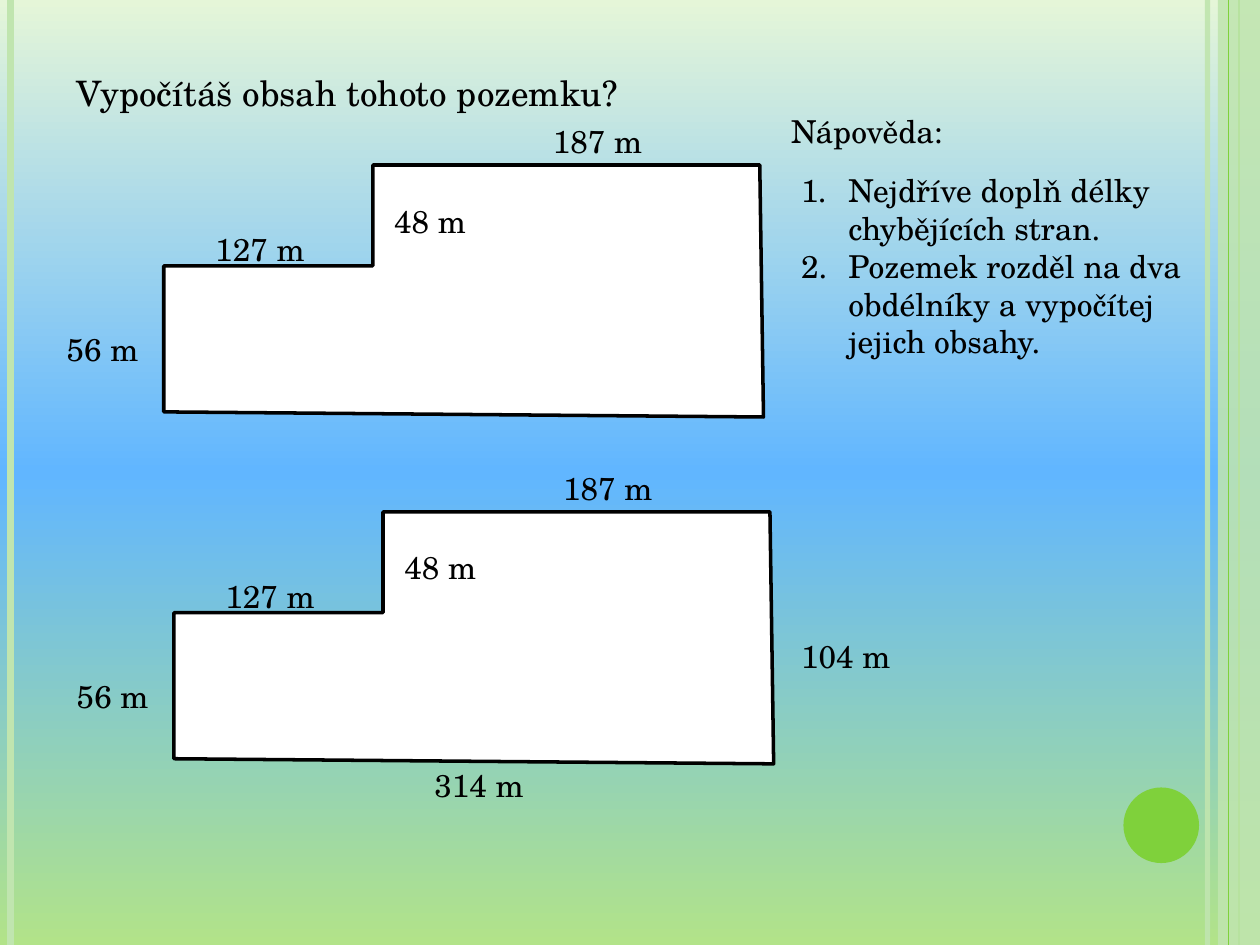
from copy import deepcopy

from lxml import etree
from pptx import Presentation
from pptx.dml.color import RGBColor
from pptx.enum.shapes import MSO_CONNECTOR, MSO_SHAPE
from pptx.enum.text import MSO_AUTO_SIZE
from pptx.oxml.ns import qn
from pptx.util import Pt

STRAIGHT = MSO_CONNECTOR.STRAIGHT
RECTANGLE, OVAL = MSO_SHAPE.RECTANGLE, MSO_SHAPE.OVAL
GROW = MSO_AUTO_SIZE.SHAPE_TO_FIT_TEXT

BLACK = RGBColor(0x00, 0x00, 0x00)
WHITE = RGBColor(0xFF, 0xFF, 0xFF)
GREEN = RGBColor(0x7F, 0xD1, 0x3B)
PALE_GREEN = RGBColor(0xC0, 0xE5, 0xAF)
BACKGROUND = [
    (0, RGBColor(0xE5, 0xF6, 0xD8)),
    (0.5, RGBColor(0x61, 0xB6, 0xFF)),
    (1, RGBColor(0xB2, 0xE3, 0x89)),
]
FONT = "TeX Gyre Schola"
WIDTH, HEIGHT = 720, 540

# Plot outline and its labels (text, left, top, width), relative to the plot
OUTLINE = [(0, 57.6), (119.5, 57.6), (119.5, 0), (340.6, 0), (342.7, 144), (0, 141.1)]
SIDES = [
    ("48 m", 124.6, 17.3, 62.6),
    ("187 m", 215.3, -28.1, 90.7),
    ("127 m", 22.3, 33.8, 85),
    ("56 m", -62.6, 90.7, 67.7),
]
FOUND_SIDES = [("104 m", 351.3, 68.2, 108), ("314 m", 141.8, 141.7, 113)]


def set_background(slide):
    fill = slide.background.fill
    fill.gradient()
    fill.gradient_angle = 270
    stops = slide.element.find(".//" + qn("a:gsLst"))
    stops.append(deepcopy(stops[0]))
    for stop, (position, color) in zip(fill.gradient_stops, BACKGROUND):
        stop.position = position
        stop.color.rgb = color


def set_alpha(sp, percent):
    color = sp.element.spPr.find(".//" + qn("a:srgbClr"))
    etree.SubElement(color, qn("a:alpha"), val=str(percent * 1000))


def add_stripe(slide, x, color, weight):
    line = slide.shapes.add_connector(STRAIGHT, Pt(x), 0, Pt(x), Pt(HEIGHT))
    line.line.color.rgb = color
    line.line.width = Pt(weight)
    etree.SubElement(line.element.spPr, qn("a:effectLst"))
    return line


def add_block(slide, kind, left, top, width, height, color):
    sp = slide.shapes.add_shape(kind, Pt(left), Pt(top), Pt(width), Pt(height))
    sp.shadow.inherit = False
    sp.fill.solid()
    sp.fill.fore_color.rgb = color
    sp.line.fill.background()
    return sp


def add_text(slide, text, left, top, width, height=29, size=18):
    box = slide.shapes.add_textbox(Pt(left), Pt(top), Pt(width), Pt(height))
    tf = box.text_frame
    tf.word_wrap = True
    tf.auto_size = GROW
    tf.text = text
    for p in tf.paragraphs:
        for r in p.runs:
            r.font.name = FONT
            r.font.size = Pt(size)
            r.font.color.rgb = BLACK
    return tf


def number_paragraphs(tf, indent):
    for p in tf.paragraphs:
        pPr = p._p.get_or_add_pPr()
        pPr.set("marL", str(Pt(indent)))
        pPr.set("indent", str(-Pt(indent)))
        etree.SubElement(pPr, qn("a:buFont"), typeface="+mj-lt")
        etree.SubElement(pPr, qn("a:buAutoNum"), type="arabicPeriod")


def add_plot(slide, left, top, labels):
    points = [(Pt(left + x), Pt(top + y)) for x, y in OUTLINE]
    builder = slide.shapes.build_freeform(*points[0])
    builder.add_line_segments(points[1:], close=True)
    sp = builder.convert_to_shape()
    sp.shadow.inherit = False
    sp.fill.solid()
    sp.fill.fore_color.rgb = WHITE
    sp.line.color.rgb = BLACK
    sp.line.width = Pt(2)
    for text, x, y, width in labels:
        add_text(slide, text, left + x, top + y, width)


def main():
    prs = Presentation()
    prs.slide_width, prs.slide_height = Pt(WIDTH), Pt(HEIGHT)
    slide = prs.slides.add_slide(prs.slide_layouts[6])

    # Background and edge decoration
    set_background(slide)
    set_alpha(add_stripe(slide, 690, PALE_GREEN, 3), 93)
    add_stripe(slide, 6, PALE_GREEN, 4.5)
    add_stripe(slide, 708, GREEN, 1.5)
    set_alpha(add_block(slide, RECTANGLE, 696, 0, 24, HEIGHT, PALE_GREEN), 87)
    add_stripe(slide, 702, GREEN, 0.75)
    add_block(slide, OVAL, 642, 450, 43.2, 43.2, GREEN)

    # Question and first plot
    add_text(slide, "Vypočítáš obsah tohoto pozemku?", 36.7, 37.4, 629, 32, size=20)
    add_plot(slide, 93.6, 94.3, SIDES)

    # Hints
    add_text(slide, "Nápověda:", 445, 60.5, 227)
    tf = add_text(
        slide,
        "Nejdříve doplň délky chybějících stran.\n"
        "Pozemek rozděl na dva obdélníky a vypočítej jejich obsahy.",
        450.7, 94.3, 244, 116.6,
    )
    number_paragraphs(tf, 27)

    # Second plot with the missing sides filled in
    add_plot(slide, 99.4, 292.5, SIDES + FOUND_SIDES)

    prs.save("out.pptx")


if __name__ == "__main__":
    main()
